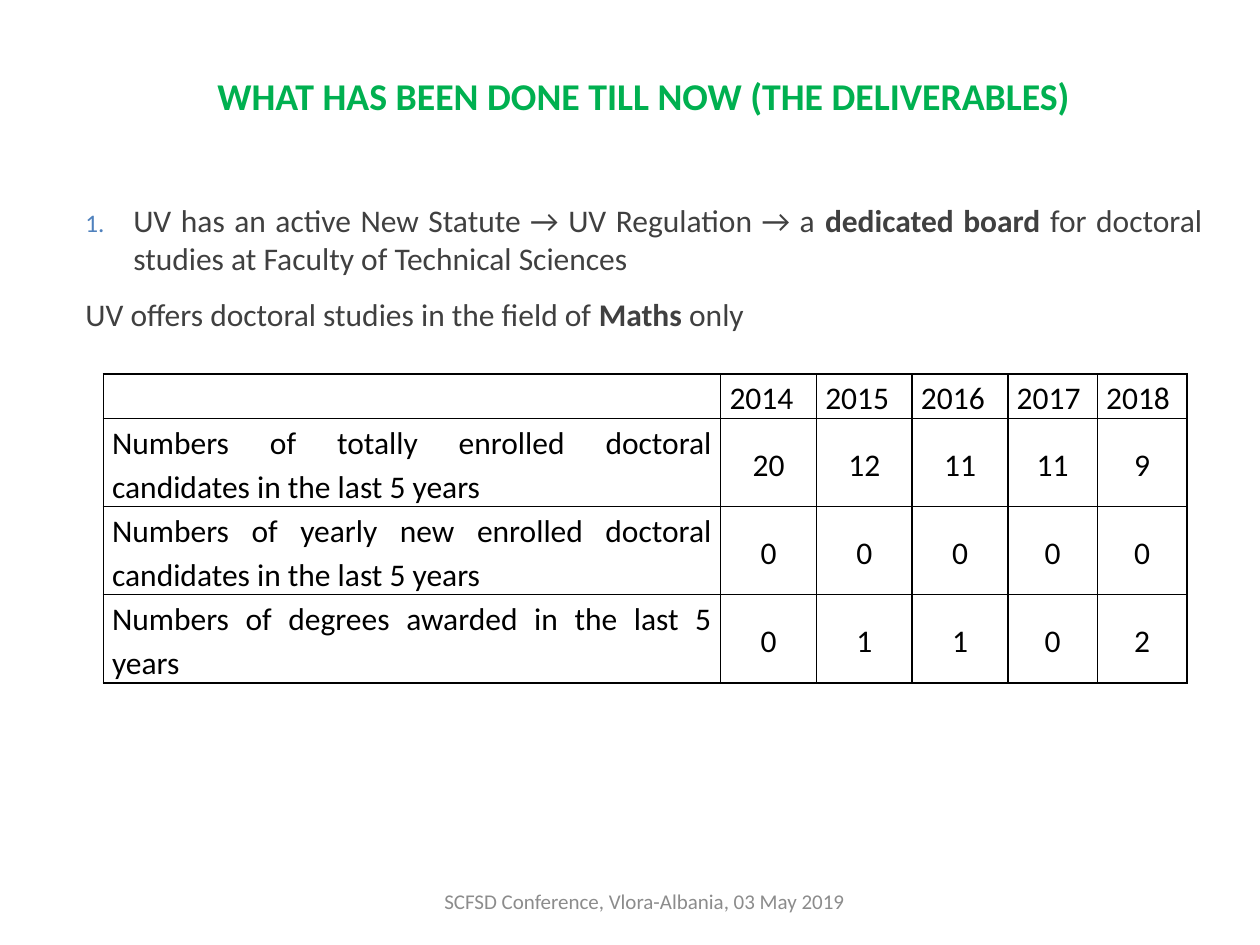
"""Build the slide on doctoral studies deliverables."""
from lxml.etree import SubElement
from pptx import Presentation
from pptx.dml.color import RGBColor
from pptx.enum.text import MSO_ANCHOR, PP_ALIGN
from pptx.oxml.ns import qn
from pptx.util import Inches, Pt

GREEN = RGBColor(0x00, 0xB0, 0x50)
BLUE = RGBColor(0x4F, 0x81, 0xBD)
DARK = RGBColor(0x40, 0x40, 0x40)
GRAY = RGBColor(0x8C, 0x8C, 0x8C)
BLACK = RGBColor(0, 0, 0)

STATUTE = [
    ("UV has an active New Statute → UV Regulation → a ", False),
    ("dedicated board ", True),
    ("for doctoral studies at Faculty of Technical Sciences", False),
]
FIELD = [
    ("UV offers doctoral studies in the field of ", False),
    ("Maths", True),
    (" only", False),
]
COLUMN_WIDTHS = [4.9, 0.76, 0.76, 0.76, 0.71, 0.71]
ROW_HEIGHTS = [0.35, 0.7, 0.7, 0.7]
DOCTORAL_FIGURES = [
    ["", "2014", "2015", "2016", "2017", "2018"],
    ["Numbers of totally enrolled doctoral candidates in the last 5 years",
     "20", "12", "11", "11", "9"],
    ["Numbers of yearly new enrolled doctoral candidates in the last 5 years",
     "0", "0", "0", "0", "0"],
    ["Numbers of degrees awarded in the last 5 years",
     "0", "1", "1", "0", "2"],
]


class SlideBuilder:
    def __init__(self, page, font_name="Calibri"):
        self.page = page
        self.font_name = font_name

    def style(self, para, size, color, align, bold=None):
        para.alignment = align
        font = para.font
        font.name, font.size, font.bold = self.font_name, Pt(size), bold
        font.color.rgb = color

    def text_frame(self, left, top, width, height, anchor):
        box = self.page.shapes.add_textbox(
            Inches(left), Inches(top), Inches(width), Inches(height))
        frame = box.text_frame
        frame.word_wrap = True
        frame.vertical_anchor = anchor
        return frame

    def line(self, text, place, size, color, bold=None):
        para = self.text_frame(*place, MSO_ANCHOR.MIDDLE).paragraphs[0]
        para.text = text
        self.style(para, size, color, PP_ALIGN.CENTER, bold)

    def number(self, para, indent, color):
        properties = para._p.get_or_add_pPr()
        properties.set("marL", str(Inches(indent)))
        properties.set("indent", str(-Inches(indent)))
        bullet_color = SubElement(properties, qn("a:buClr"))
        SubElement(bullet_color, qn("a:srgbClr"), val=str(color))
        SubElement(properties, qn("a:buSzPct"), val="80000")
        SubElement(properties, qn("a:buFont"), typeface=self.font_name)
        SubElement(properties, qn("a:buAutoNum"), type="arabicPeriod")

    def body(self, numbered, plain, place):
        frame = self.text_frame(*place, MSO_ANCHOR.TOP)
        first, second = frame.paragraphs[0], frame.add_paragraph()
        self.number(first, 0.38, BLUE)
        second.space_before = Pt(10)
        for para, spans in ((first, numbered), (second, plain)):
            for text, bold in spans:
                span = para.add_run()
                span.text = text
                span.font.bold = bold
            self.style(para, 18, DARK, PP_ALIGN.JUSTIFY)

    def border(self, cell, color):
        properties = cell._tc.get_or_add_tcPr()
        for side in ("lnL", "lnR", "lnT", "lnB"):
            edge = SubElement(properties, qn(f"a:{side}"), w=str(Pt(1)))
            fill = SubElement(edge, qn("a:solidFill"))
            SubElement(fill, qn("a:srgbClr"), val=str(color))

    def cell(self, cell, text, align):
        self.border(cell, BLACK)
        cell.fill.background()
        cell.margin_left = cell.margin_right = Inches(0.07)
        cell.margin_top = cell.margin_bottom = 0
        cell.vertical_anchor = MSO_ANCHOR.MIDDLE
        para = cell.text_frame.paragraphs[0]
        para.text = text
        para.line_spacing = 1.15
        self.style(para, 18, BLACK, align)

    def table(self, rows, left, top, widths, heights):
        table = self.page.shapes.add_table(
            len(rows), len(widths), Inches(left), Inches(top),
            Inches(sum(widths)), Inches(sum(heights))).table
        table.first_row = table.horz_banding = False
        for column, width in zip(table.columns, widths):
            column.width = Inches(width)
        for row, height in zip(table.rows, heights):
            row.height = Inches(height)
        for i, row in enumerate(rows):
            for j, text in enumerate(row):
                centred = i > 0 and j > 0
                align = PP_ALIGN.CENTER if centred else PP_ALIGN.JUSTIFY
                self.cell(table.cell(i, j), text, align)


def main():
    deck = Presentation()
    deck.slide_width, deck.slide_height = Inches(10), Inches(7.5)
    slide = SlideBuilder(deck.slides.add_slide(deck.slide_layouts[6]))
    slide.line("SCFSD Conference, Vlora-Albania, 03 May 2019",
               (3.42, 6.95, 3.39, 0.4), 12, GRAY)
    slide.line("WHAT HAS BEEN DONE TILL NOW (THE DELIVERABLES)",
               (1.51, 0.47, 7.2, 0.58), 21.6, GREEN, True)
    slide.body(STATUTE, FIELD, (0.58, 1.55, 9.06, 3.84))
    slide.table(DOCTORAL_FIGURES, 0.82, 2.97, COLUMN_WIDTHS, ROW_HEIGHTS)
    deck.save("out.pptx")


if __name__ == "__main__":
    main()
